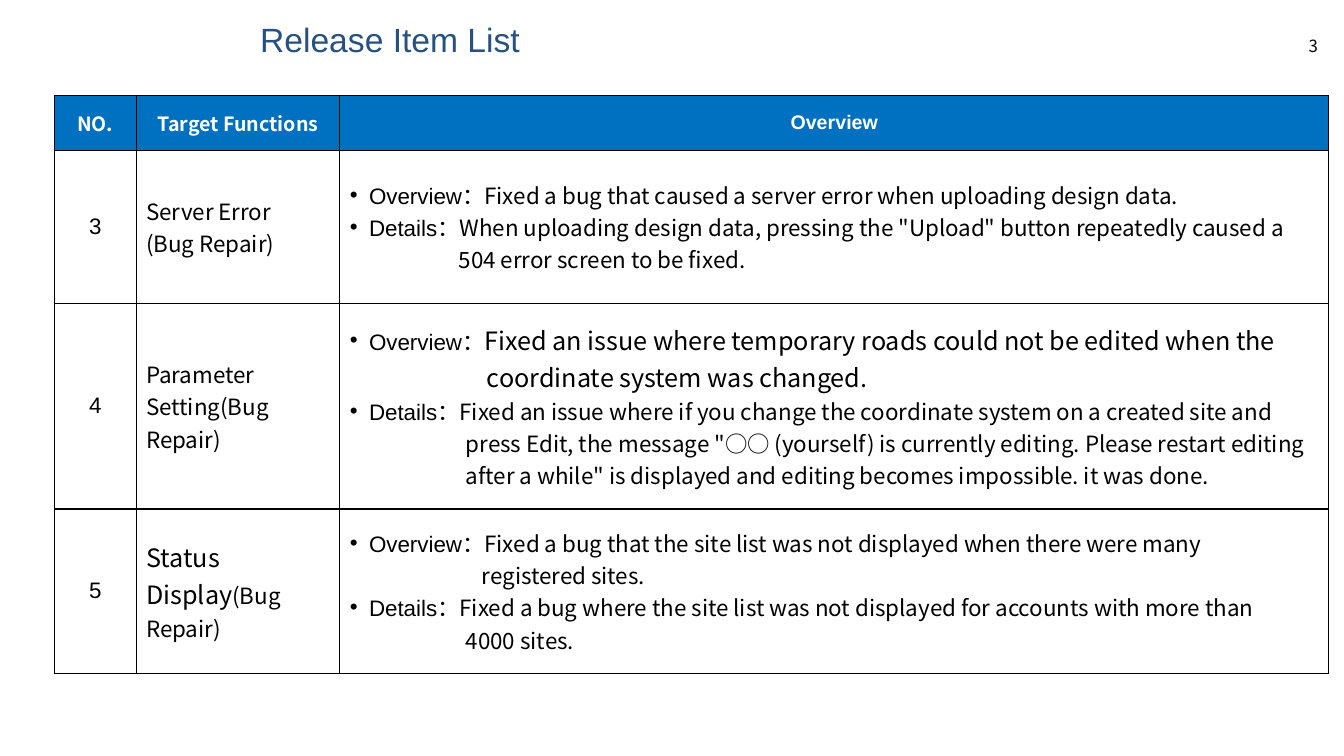
"""Build the Release Item List slide."""
from lxml import etree
from pptx import Presentation
from pptx.dml.color import RGBColor
from pptx.enum.text import MSO_ANCHOR, PP_ALIGN
from pptx.oxml.ns import qn
from pptx.util import Inches, Pt

MIDDLE = MSO_ANCHOR.MIDDLE
LEFT, CENTER, RIGHT = PP_ALIGN.LEFT, PP_ALIGN.CENTER, PP_ALIGN.RIGHT
LATIN, CJK = "Arial", "Noto Sans CJK JP"
COLORS = {"title": "265180", "header": "0070C0", "body": "FFFFFF", "text": "000000", "light": "FFFFFF"}

TITLE = "Release Item List"
PAGE_NUMBER = "3"
HEADERS = [("NO.", CJK), ("Target Functions", CJK), ("Overview", LATIN)]
ITEMS = [
    {
        "number": "3",
        "function": [[("Server Error", 16)], [("(Bug Repair)", 16)]],
        "notes": [
            ("Overview：", 16, 0, ["Fixed a bug that caused a server error when uploading design data."]),
            ("Details：", 16, 1.08, [
                'When uploading design data, pressing the "Upload" button repeatedly caused a',
                "504 error screen to be fixed."]),
        ],
    },
    {
        "number": "4",
        "function": [[("Parameter Setting(Bug Repair)", 16)]],
        "notes": [
            ("Overview：", 18, 1.36, [
                "Fixed an issue where temporary roads could not be edited when the",
                "coordinate system was changed."]),
            ("Details：", 16, 1.15, [
                "Fixed an issue where if you change the coordinate system on a created site and",
                'press Edit, the message "○○ (yourself) is currently editing. Please restart editing',
                'after a while" is displayed and editing becomes impossible. it was done.']),
        ],
    },
    {
        "number": "5",
        "function": [[("Status Display", 18), ("(Bug Repair)", 16)]],
        "notes": [
            ("Overview：", 16, 1.31, [
                "Fixed a bug that the site list was not displayed when there were many",
                "registered sites."]),
            ("Details：", 16, 1.15, [
                "Fixed a bug where the site list was not displayed for accounts with more than",
                "4000 sites."]),
        ],
    },
]
COLUMN_WIDTHS = [0.81, 2.02, 9.81]
ROW_HEIGHTS = [0.54, 1.52, 2.04, 1.63]
BULLET_INDENT = 0.19


def add_text(paragraph, text, size, face, color="text", bold=False):
    run = paragraph.add_run()
    run.text = text
    run.font.color.rgb = RGBColor.from_string(COLORS[color])
    for attribute, value in {"size": Pt(size), "name": face, "bold": bold}.items():
        setattr(run.font, attribute, value)
    etree.SubElement(run.font._element, qn("a:ea"), typeface=CJK)


def indent(paragraph, left, bullet=False):
    properties = paragraph._p.get_or_add_pPr()
    properties.set("marL", str(Inches(left)))
    properties.set("indent", str(Inches(-left if bullet else 0)))
    if bullet:
        etree.SubElement(properties, qn("a:buFont"), typeface=LATIN)
        etree.SubElement(properties, qn("a:buChar"), char="•")


def next_paragraph(frame):
    first = frame.paragraphs[0]
    return frame.add_paragraph() if first.runs else first


def style_cell(cell, fill):
    properties = cell._tc.get_or_add_tcPr()
    for side in ("a:lnL", "a:lnR", "a:lnT", "a:lnB"):
        border = etree.SubElement(properties, qn(side), w=str(Pt(1)))
        paint = etree.SubElement(border, qn("a:solidFill"))
        etree.SubElement(paint, qn("a:srgbClr"), val=COLORS["text"])
    cell.fill.solid()
    cell.fill.fore_color.rgb = RGBColor.from_string(COLORS[fill])
    cell.vertical_anchor = MIDDLE


def add_centered(cell, text, size, face, color="text", bold=False):
    paragraph = cell.text_frame.paragraphs[0]
    paragraph.alignment = CENTER
    add_text(paragraph, text, size, face, color, bold)


def fill_item(cells, item):
    number, function, overview = cells
    add_centered(number, item["number"], 16, LATIN)
    for line in item["function"]:
        paragraph = next_paragraph(function.text_frame)
        for text, size in line:
            add_text(paragraph, text, size, CJK)
    for label, size, hang, (opening, *continuation) in item["notes"]:
        paragraph = next_paragraph(overview.text_frame)
        indent(paragraph, BULLET_INDENT, bullet=True)
        add_text(paragraph, label, 16, LATIN)
        add_text(paragraph, opening, size, CJK)
        for line in continuation:
            paragraph = next_paragraph(overview.text_frame)
            indent(paragraph, hang)
            add_text(paragraph, line, size, CJK)


def add_release_table(slide):
    frame = slide.shapes.add_table(
        len(ROW_HEIGHTS), len(COLUMN_WIDTHS), Inches(0.54), Inches(0.95),
        Inches(sum(COLUMN_WIDTHS)), Inches(sum(ROW_HEIGHTS)))
    table = frame.table
    table.horz_banding = False
    table.first_row = False
    for column, width in zip(table.columns, COLUMN_WIDTHS):
        column.width = Inches(width)
    for index, (row, height) in enumerate(zip(table.rows, ROW_HEIGHTS)):
        row.height = Inches(height)
        for cell in row.cells:
            style_cell(cell, "body" if index else "header")
    header, *body = table.rows
    for cell, (text, face) in zip(header.cells, HEADERS):
        add_centered(cell, text, 14, face, "light", True)
    for row, item in zip(body, ITEMS):
        fill_item(row.cells, item)


def main():
    deck = Presentation()
    deck.slide_width, deck.slide_height = Inches(13.33), Inches(7.5)
    slide = deck.slides.add_slide(deck.slide_layouts[5])

    title = slide.shapes.title
    title.left, title.top, title.width, title.height = map(Inches, (2.48, 0.2, 8.92, 0.42))
    title.text_frame.vertical_anchor = MIDDLE
    heading = title.text_frame.paragraphs[0]
    heading.alignment = LEFT
    heading.line_spacing = 0.9
    add_text(heading, TITLE, 24, LATIN, "title")

    page = slide.shapes.add_textbox(*map(Inches, (12.48, 0.3, 0.69, 0.3))).text_frame
    page.word_wrap = True
    page.vertical_anchor = MIDDLE
    page.paragraphs[0].alignment = RIGHT
    add_text(page.paragraphs[0], PAGE_NUMBER, 12, CJK)

    add_release_table(slide)
    deck.save("out.pptx")


if __name__ == "__main__":
    main()
